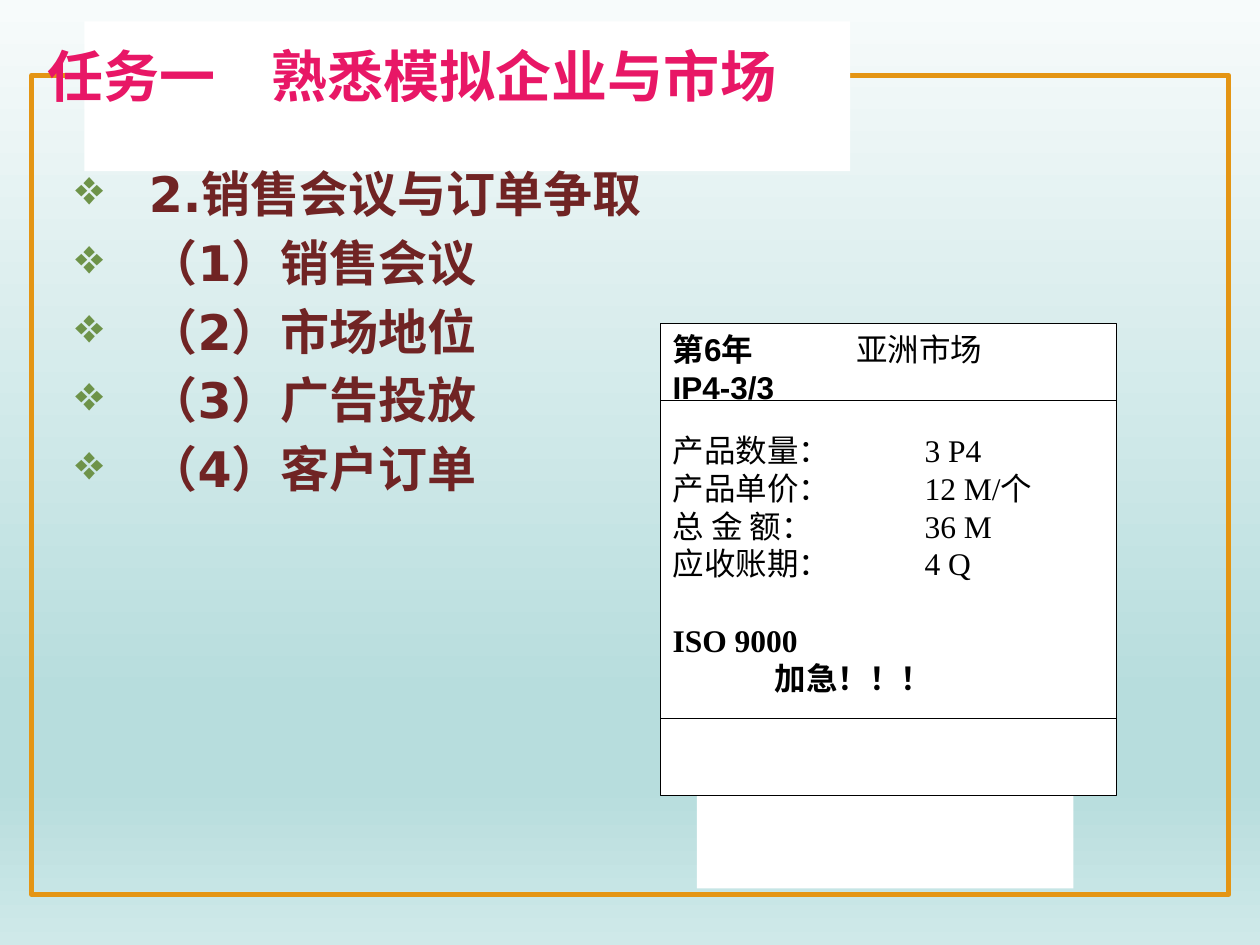
from lxml import etree
from pptx import Presentation
from pptx.dml.color import RGBColor
from pptx.enum.shapes import MSO_CONNECTOR, MSO_SHAPE
from pptx.enum.text import MSO_ANCHOR, PP_ALIGN
from pptx.oxml.ns import qn
from pptx.util import Cm, Pt

RECT = MSO_SHAPE.RECTANGLE
STRAIGHT = MSO_CONNECTOR.STRAIGHT
CENTER, LEFT = PP_ALIGN.CENTER, PP_ALIGN.LEFT
MIDDLE, TOP = MSO_ANCHOR.MIDDLE, MSO_ANCHOR.TOP

# Content
TITLE = "任务一　熟悉模拟企业与市场"
TOPICS = ["2.销售会议与订单争取", "（1）销售会议", "（2）市场地位",
          "（3）广告投放", "（4）客户订单"]
SANS, SERIF = "Arial", "Times New Roman"
# Order card lines: runs of (text, bold), font, tab stop in cm, space before in pt
ORDER = [
    ([("第6年", True), ("\t亚洲市场", False)], SANS, 3.7, 0),
    ([("IP4-3/3", True)], SANS, None, 0),
    ([("产品数量：\t3 P4", False)], SERIF, 5.08, 14.5),
    ([("产品单价：\t12 M/个", False)], SERIF, 5.08, 0),
    ([("总 金 额：\t36 M", False)], SERIF, 5.08, 0),
    ([("应收账期：\t4 Q", False)], SERIF, 5.08, 0),
    ([("ISO 9000", True)], SERIF, None, 22),
    ([("\t加急！！！", True)], SERIF, 2.06, 0),
]
COLORS = {"frame": "E49514", "panel": "FFFFFF", "title": "E81766",
          "topic": "702424", "bullet": "6E9349", "ink": "000000"}
BACKGROUND = [(0, "F7FBFB"), (74, "B7DDDD"), (83, "B7DDDD"), (100, "CFE9E9")]

# Card geometry in cm
CARD_LEFT, CARD_TOP, CARD_WIDTH, CARD_HEIGHT = 13.31, 6.53, 9.19, 9.5
RULES = [8.08, 14.48]


def rgb(key):
    return RGBColor.from_string(COLORS[key])


def add_rect(slide, box, fill=None, line=None, weight=0.5):
    rect = slide.shapes.add_shape(RECT, *map(Cm, box))
    rect.shadow.inherit = False
    if fill:
        rect.fill.solid()
        rect.fill.fore_color.rgb = rgb(fill)
    else:
        rect.fill.background()
    if line:
        rect.line.color.rgb = rgb(line)
        rect.line.width = Pt(weight)
    else:
        rect.line.fill.background()
    return rect


def add_run(paragraph, text, font, size, color, bold):
    run = paragraph.add_run()
    run.text = text
    run.font.name = font
    run.font.size = Pt(size)
    run.font.bold = bold
    run.font.color.rgb = rgb(color)


def next_paragraph(frame, index):
    return frame.paragraphs[0] if index == 0 else frame.add_paragraph()


def set_background(slide):
    slide.background.fill.gradient()
    stops = slide.element.find(".//" + qn("a:gsLst"))
    for stop in list(stops):
        stops.remove(stop)
    for position, color in BACKGROUND:
        stop = etree.SubElement(stops, qn("a:gs"), pos=str(position * 1000))
        etree.SubElement(stop, qn("a:srgbClr"), val=color)
    slide.background.fill.gradient_angle = 270


def add_bullet(paragraph):
    props = paragraph._p.get_or_add_pPr()
    props.set("marL", str(Cm(1.48)))
    props.set("indent", str(-Cm(1.48)))
    color = etree.SubElement(props, qn("a:buClr"))
    etree.SubElement(color, qn("a:srgbClr"), val=COLORS["bullet"])
    etree.SubElement(props, qn("a:buChar"), char="❖")


def add_tab(paragraph, position):
    tabs = etree.SubElement(paragraph._p.get_or_add_pPr(), qn("a:tabLst"))
    etree.SubElement(tabs, qn("a:tab"), pos=str(Cm(position)), algn="l")


def add_title(slide):
    title = slide.shapes.title
    title.left, title.top, title.width, title.height = map(
        Cm, (0.64, 0.71, 15.34, 1.6))
    frame = title.text_frame
    frame.word_wrap = False
    frame.vertical_anchor = MIDDLE
    heading = frame.paragraphs[0]
    heading.alignment = CENTER
    add_run(heading, TITLE, "Noto Sans CJK JP", 32, "title", True)


def add_topics(slide):
    topics = slide.shapes.add_textbox(*map(Cm, (1.27, 3.18, 22.86, 13.59)))
    frame = topics.text_frame
    frame.word_wrap = True
    for index, text in enumerate(TOPICS):
        paragraph = next_paragraph(frame, index)
        add_bullet(paragraph)
        if index:
            paragraph.space_before = Pt(5.6)
        add_run(paragraph, text, "DejaVu Sans", 28, "topic", True)


def add_order_card(slide):
    add_rect(slide, (14.05, 15.98, 7.59, 1.93), "panel")
    card = add_rect(slide, (CARD_LEFT, CARD_TOP, CARD_WIDTH, CARD_HEIGHT),
                    "panel", "ink")
    frame = card.text_frame
    frame.word_wrap = True
    frame.vertical_anchor = TOP
    for index, (runs, font, tab, before) in enumerate(ORDER):
        paragraph = next_paragraph(frame, index)
        if tab:
            add_tab(paragraph, tab)
        paragraph.alignment = LEFT
        if before:
            paragraph.space_before = Pt(before)
        for text, bold in runs:
            add_run(paragraph, text, font, 18, "ink", bold)
    for y in RULES:
        rule = slide.shapes.add_connector(
            STRAIGHT, Cm(CARD_LEFT), Cm(y), Cm(CARD_LEFT + CARD_WIDTH), Cm(y))
        rule.line.color.rgb = rgb("ink")
        rule.line.width = Pt(0.5)
        etree.SubElement(rule._element.spPr, qn("a:effectLst"))


def main():
    prs = Presentation()
    prs.slide_width, prs.slide_height = Cm(25.4), Cm(19.05)
    slide = prs.slides.add_slide(prs.slide_layouts[5])
    set_background(slide)

    # Frame and the panel behind the title, both beneath the title text
    frame = add_rect(slide, (0.64, 1.52, 24.13, 16.51), line="frame", weight=3)
    panel = add_rect(slide, (1.7, 0.43, 15.44, 3.02), "panel")
    for backdrop in (frame, panel):
        slide.shapes.title._element.addprevious(backdrop._element)

    add_title(slide)
    add_topics(slide)
    add_order_card(slide)
    prs.save("out.pptx")


if __name__ == "__main__":
    main()
